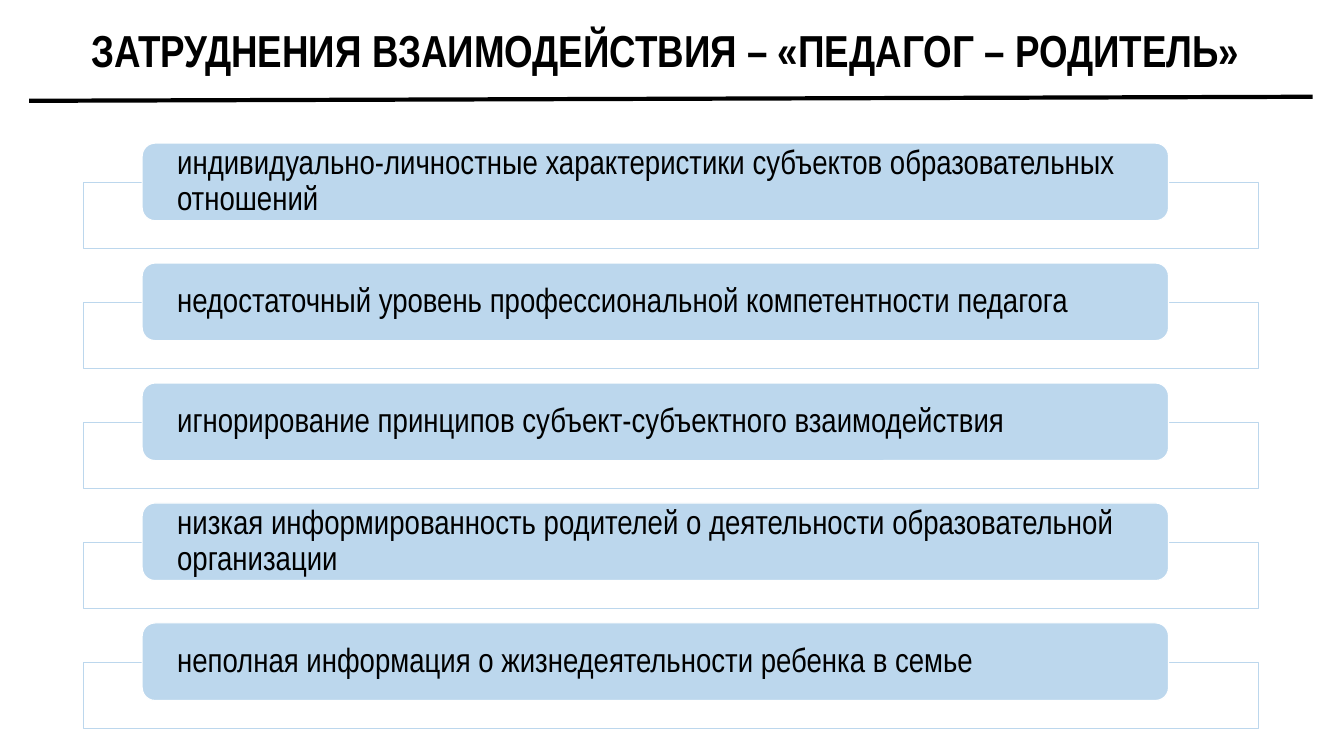
from lxml.etree import SubElement
from pptx import Presentation
from pptx.dml.color import RGBColor
from pptx.enum.shapes import MSO_CONNECTOR, MSO_SHAPE
from pptx.enum.text import MSO_ANCHOR, MSO_AUTO_SIZE, PP_ALIGN
from pptx.oxml.ns import qn
from pptx.util import Inches, Pt

DIFFICULTIES = [
    "индивидуально-личностные характеристики субъектов образовательных отношений",
    "недостаточный уровень профессиональной компетентности педагога",
    "игнорирование принципов субъект-субъектного взаимодействия",
    "низкая информированность родителей о деятельности образовательной организации",
    "неполная информация о жизнедеятельности ребенка в семье",
]
ROW_TOP = 1.42
ROW_STEP = 1.19


def colour(value):
    return RGBColor.from_string(value)


class SlideBuilder:
    """Hold the slide style and add each kind of element to the page."""

    font = "Arial Narrow"
    ink = "000000"
    accent = "BCD7ED"
    paper = "FFFFFF"

    def __init__(self, page):
        self.page = page

    def set_text(self, shape, text, size, align, side, edge, bold=False):
        frame = shape.text_frame
        frame.word_wrap = True
        frame.auto_size = MSO_AUTO_SIZE.NONE
        frame.vertical_anchor = MSO_ANCHOR.MIDDLE
        frame.margin_left = frame.margin_right = Inches(side)
        frame.margin_top = frame.margin_bottom = Inches(edge)
        para = frame.paragraphs[0]
        para.text = text
        para.alignment = align
        para.line_spacing = 0.9
        para.font.name = self.font
        para.font.size = Pt(size)
        para.font.bold = bold
        para.font.color.rgb = colour(self.ink)

    def title(self, text, left, top, width, height):
        box = self.page.shapes.title
        box.left, box.top = Inches(left), Inches(top)
        box.width, box.height = Inches(width), Inches(height)
        self.set_text(box, text, 32, PP_ALIGN.CENTER, 0.1, 0.05, bold=True)

    def box(self, kind, left, top, width, height, fill, line):
        shape = self.page.shapes.add_shape(
            kind, Inches(left), Inches(top), Inches(width), Inches(height))
        shape.shadow.inherit = False
        shape.fill.solid()
        shape.fill.fore_color.rgb = colour(fill)
        shape.line.color.rgb = colour(line)
        shape.line.width = Pt(0.85)
        return shape

    def frame(self, top):
        shape = self.box(MSO_SHAPE.RECTANGLE, 0.83, top, 11.65, 0.66,
                         self.paper, self.accent)
        tint = shape._element.spPr.find(qn("a:solidFill"))[0]
        SubElement(tint, qn("a:alpha"), val="90000")

    def label(self, text, top):
        shape = self.box(MSO_SHAPE.ROUNDED_RECTANGLE, 1.41, top, 10.18, 0.77,
                         self.accent, self.paper)
        self.set_text(shape, text, 24, PP_ALIGN.LEFT, 0.31, 0)

    def rule(self, start, end):
        line = self.page.shapes.add_connector(
            MSO_CONNECTOR.STRAIGHT, *map(Inches, start + end))
        line.line.color.rgb = colour(self.ink)
        line.line.width = Pt(3)
        SubElement(line._element.spPr, qn("a:effectLst"))


def main():
    deck = Presentation()
    deck.slide_width, deck.slide_height = Inches(13.33), Inches(7.5)
    builder = SlideBuilder(deck.slides.add_slide(deck.slide_layouts[5]))
    builder.title("ЗАТРУДНЕНИЯ ВЗАИМОДЕЙСТВИЯ – «ПЕДАГОГ – РОДИТЕЛЬ»",
                  0, 0.09, 13.21, 0.87)
    for row, difficulty in enumerate(DIFFICULTIES):
        top = ROW_TOP + row * ROW_STEP
        builder.frame(top + 0.39)
        builder.label(difficulty, top)
    builder.rule((0.29, 1), (13.02, 0.96))
    deck.save("out.pptx")


if __name__ == "__main__":
    main()
